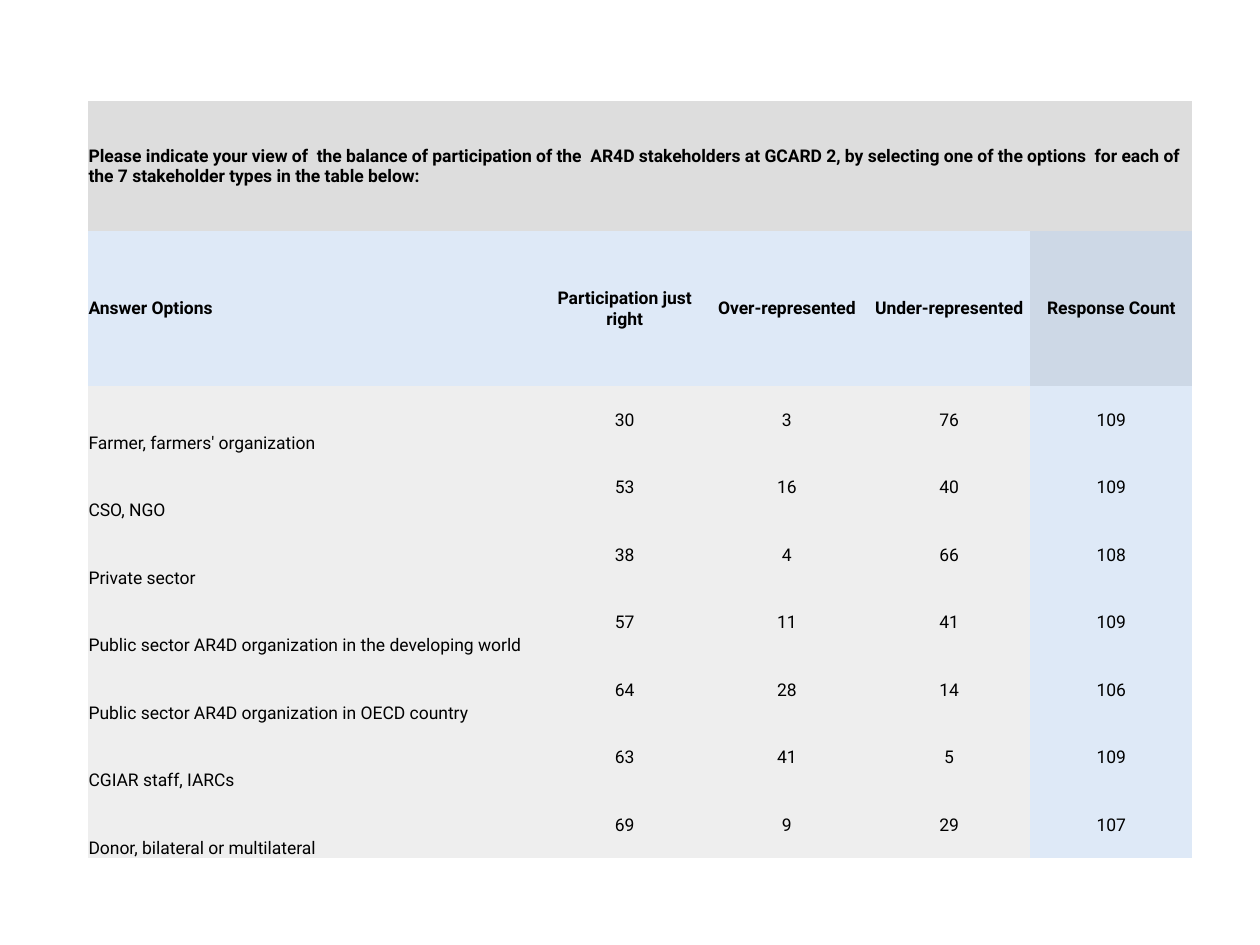
from pptx import Presentation
from pptx.dml.color import RGBColor
from pptx.enum.text import MSO_ANCHOR, PP_ALIGN
from pptx.util import Pt

MIDDLE, BOTTOM = MSO_ANCHOR.MIDDLE, MSO_ANCHOR.BOTTOM
LEFT, CENTER = PP_ALIGN.LEFT, PP_ALIGN.CENTER

BLACK = RGBColor(0x00, 0x00, 0x00)
QUESTION_GRAY = RGBColor(0xDD, 0xDD, 0xDD)
ANSWER_GRAY = RGBColor(0xEE, 0xEE, 0xEE)
LIGHT_BLUE = RGBColor(0xDE, 0xE9, 0xF7)
COUNT_BLUE = RGBColor(0xCD, 0xD8, 0xE6)

NO_STYLE_NO_GRID = "{2D5ABB26-0587-4C30-8999-92F81FD0307C}"

QUESTION = (
    "Please indicate your view of  the balance of participation of the  "
    "AR4D stakeholders at GCARD 2, by selecting one of the options  "
    "for each of the 7 stakeholder types in the table below:"
)
HEADINGS = ["Answer Options", "Participation just right", "Over-represented",
            "Under-represented", "Response Count"]
ANSWERS = [
    ["Farmer, farmers' organization", 30, 3, 76, 109],
    ["CSO, NGO", 53, 16, 40, 109],
    ["Private sector", 38, 4, 66, 108],
    ["Public sector AR4D organization in the developing world", 57, 11, 41, 109],
    ["Public sector AR4D organization in OECD country", 64, 28, 14, 106],
    ["CGIAR staff, IARCs", 63, 41, 5, 109],
    ["Donor, bilateral or multilateral", 69, 9, 29, 107],
]
COLUMN_WIDTHS = [260.6] + [92.7] * 4
ROW_HEIGHTS = [74.3, 88.6] + [38.6] * len(ANSWERS)


def fill_cell(cell, text, fill, align, anchor, bold):
    cell.fill.solid()
    cell.fill.fore_color.rgb = fill
    cell.vertical_anchor = anchor
    cell.margin_left = cell.margin_right = cell.margin_top = Pt(0.6)
    cell.margin_bottom = 0
    paragraph = cell.text_frame.paragraphs[0]
    paragraph.text = text
    paragraph.alignment = align
    font = paragraph.runs[0].font
    font.name = "Roboto"
    font.size = Pt(10)
    font.bold = bold
    font.color.rgb = BLACK


prs = Presentation()
prs.slide_width, prs.slide_height = Pt(720), Pt(540)
slide = prs.slides.add_slide(prs.slide_layouts[6])

survey = slide.shapes.add_table(
    len(ROW_HEIGHTS), len(COLUMN_WIDTHS), Pt(50), Pt(57.6),
    Pt(sum(COLUMN_WIDTHS)), Pt(sum(ROW_HEIGHTS))).table
survey.first_row = survey.horz_banding = False
survey._tbl.tblPr[0].text = NO_STYLE_NO_GRID
for column, width in zip(survey.columns, COLUMN_WIDTHS):
    column.width = Pt(width)
for row, height in zip(survey.rows, ROW_HEIGHTS):
    row.height = Pt(height)

survey.cell(0, 0).merge(survey.cell(0, len(HEADINGS) - 1))
fill_cell(survey.cell(0, 0), QUESTION, QUESTION_GRAY, LEFT, MIDDLE, True)

count_column = len(HEADINGS) - 1
for r, values in enumerate([HEADINGS] + ANSWERS, start=1):
    is_heading = r == 1
    for c, value in enumerate(values):
        if c == count_column:
            fill = COUNT_BLUE if is_heading else LIGHT_BLUE
        else:
            fill = LIGHT_BLUE if is_heading else ANSWER_GRAY
        align = LEFT if c == 0 else CENTER
        anchor = BOTTOM if c == 0 and not is_heading else MIDDLE
        fill_cell(survey.cell(r, c), str(value), fill, align, anchor, is_heading)

prs.save("out.pptx")
